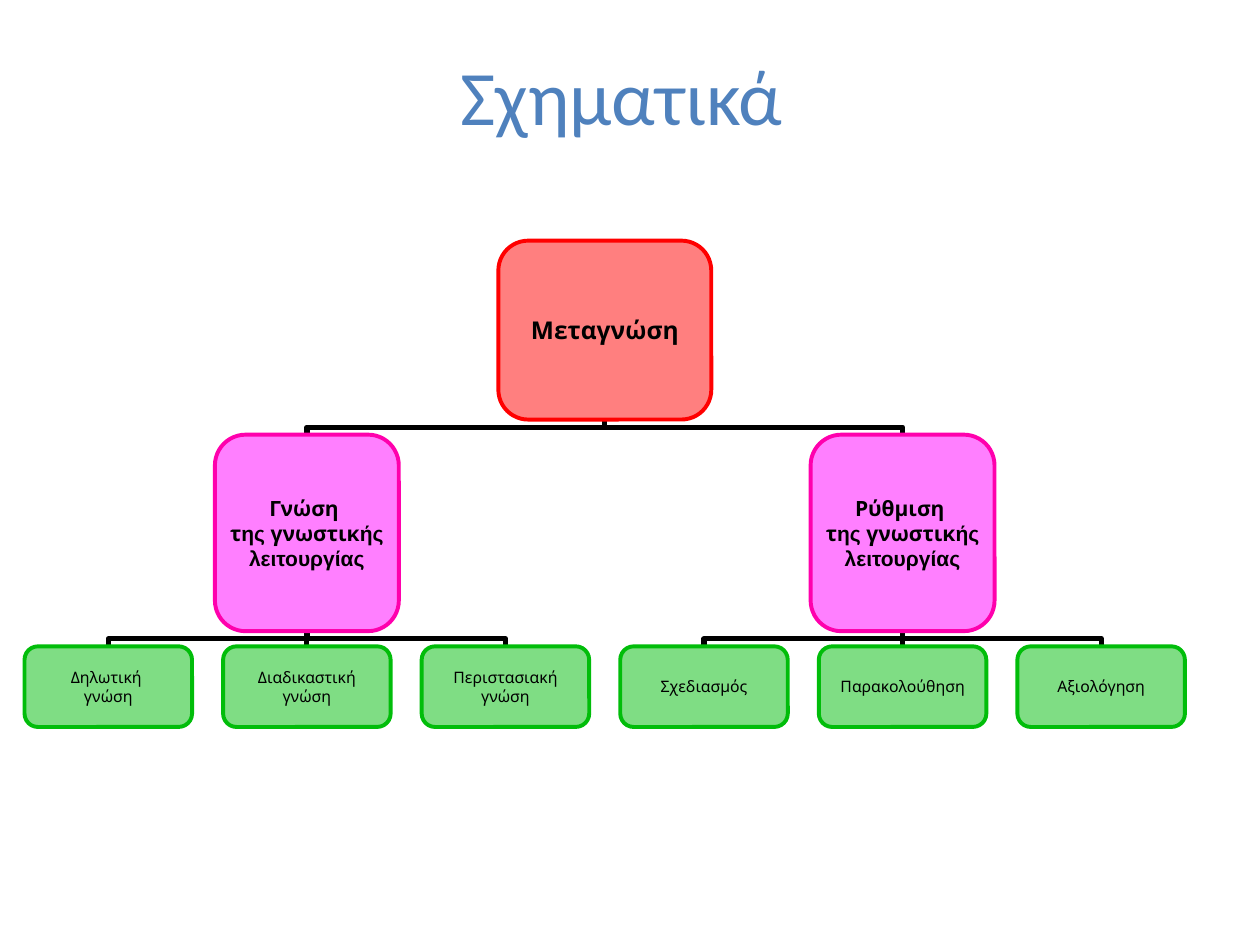
"""Build a slide with a three-level diagram of metacognition."""
from lxml.etree import SubElement
from pptx import Presentation
from pptx.dml.color import RGBColor
from pptx.enum.shapes import MSO_CONNECTOR as Connector, MSO_SHAPE as Shape
from pptx.enum.text import MSO_ANCHOR as Anchor, PP_ALIGN as Align
from pptx.oxml.ns import qn
from pptx.util import Inches, Pt

BLACK = RGBColor(0x00, 0x00, 0x00)
BLUE = RGBColor(0x4F, 0x81, 0xBD)
RED = RGBColor(0xFF, 0x00, 0x00)
MAGENTA = RGBColor(0xFF, 0x00, 0xFF)
PINK = RGBColor(0xFF, 0x00, 0xAD)
GREEN = RGBColor(0x01, 0xBD, 0x0A)

NOTO, ARIAL = "Noto Sans", "Arial"
TITLE = "Σχηματικά"
ROOT = [[("Μεταγνώση", NOTO)]]
FUNCTION = [
    [("τ", NOTO), ("ης", ARIAL), (" γνωστικ", NOTO), ("ής", ARIAL)],
    [("λειτουργίας", ARIAL)],
]
BRANCHES = [
    ("Γνώση ", [["Δηλωτική ", "γνώση"], ["Διαδικαστική", "γνώση"], ["Περιστασιακή", "γνώση"]]),
    ("Ρύθμιση ", [["Σχεδιασμός"], ["Παρακολούθηση"], ["Αξιολόγηση"]]),
]

ROOT_STYLE = dict(top=1.91, width=1.69, height=1.42, fill=RED, line=RED, size=14, bold=True)
BRANCH_STYLE = dict(top=3.45, width=1.46, height=1.56, fill=MAGENTA, line=PINK, size=12, bold=True)
LEAF_STYLE = dict(top=5.13, width=1.33, height=0.64, fill=GREEN, line=GREEN, size=9, bold=False)
FIRST_CENTER, LAST_CENTER = 0.86, 8.74
PITCH = (LAST_CENTER - FIRST_CENTER) / 5
GAP = 0.1


def write(frame, lines, size, color, bold=False):
    """Write centred lines, each a list of (text, font) runs."""
    frame.vertical_anchor = Anchor.MIDDLE
    for index, line in enumerate(lines):
        para = frame.paragraphs[0] if index == 0 else frame.add_paragraph()
        para.alignment = Align.CENTER
        for text, font in line:
            span = para.add_run()
            span.text = text
            span.font.name, span.font.size = font, Pt(size)
            span.font.bold, span.font.color.rgb = bold, color


def add_box(page, center, lines, top, width, height, fill, line, size, bold):
    """Add a half-transparent rounded box around a horizontal centre."""
    box = page.shapes.add_shape(
        Shape.ROUNDED_RECTANGLE, Inches(center - width / 2), Inches(top), Inches(width), Inches(height))
    box.shadow.inherit = False
    box.fill.solid()
    box.fill.fore_color.rgb = fill
    color = box.fill._xPr.find(qn("a:solidFill"))[0]
    SubElement(color, qn("a:alpha"), val="50000")
    box.line.color.rgb, box.line.width = line, Pt(2.25)
    frame = box.text_frame
    frame.word_wrap = False
    frame.margin_left = frame.margin_right = frame.margin_top = frame.margin_bottom = 0
    write(frame, lines, size, BLACK, bold)


def link(page, child, parent, parent_style):
    """Join a child to its parent with an elbow turned upright."""
    middle_x = (child + parent) / 2
    middle_y = parent_style["top"] + parent_style["height"] + GAP / 2 + 0.01
    half_span = abs(child - parent) / 2
    rightward = child - parent > 0.01
    half_gap = -GAP / 2 if rightward else GAP / 2
    elbow = page.shapes.add_connector(
        Connector.ELBOW, Inches(middle_x - half_gap), Inches(middle_y - half_span),
        Inches(middle_x + half_gap), Inches(middle_y + half_span))
    elbow.line.color.rgb, elbow.line.width = BLACK, Pt(3)
    properties = elbow._element.spPr
    properties.find(qn("a:xfrm")).set("rot", str((90 if rightward else 270) * 60000))
    SubElement(properties, qn("a:effectLst"))


def main():
    """Lay out the tree and save the deck."""
    deck = Presentation()
    deck.slide_width, deck.slide_height = Inches(10), Inches(7.5)
    page = deck.slides.add_slide(deck.slide_layouts[6])

    title = page.shapes.add_textbox(Inches(0.5), Inches(0.28), Inches(8.87), Inches(0.95))
    title.text_frame.word_wrap = True
    write(title.text_frame, [[(TITLE, "Calibri")]], 44, BLUE)

    root_center = (FIRST_CENTER + LAST_CENTER) / 2
    boxes = [(root_center, ROOT, ROOT_STYLE)]
    for number, (heading, leaves) in enumerate(BRANCHES):
        centers = [FIRST_CENTER + PITCH * (3 * number + column) for column in range(3)]
        branch_center = centers[1]
        link(page, branch_center, root_center, ROOT_STYLE)
        boxes.append((branch_center, [[(heading, NOTO)], *FUNCTION], BRANCH_STYLE))
        for center, words in zip(centers, leaves):
            link(page, center, branch_center, BRANCH_STYLE)
            boxes.append((center, [[(text, NOTO)] for text in words], LEAF_STYLE))

    for center, lines, style in boxes:
        add_box(page, center, lines, **style)
    deck.save("out.pptx")


if __name__ == "__main__":
    main()
